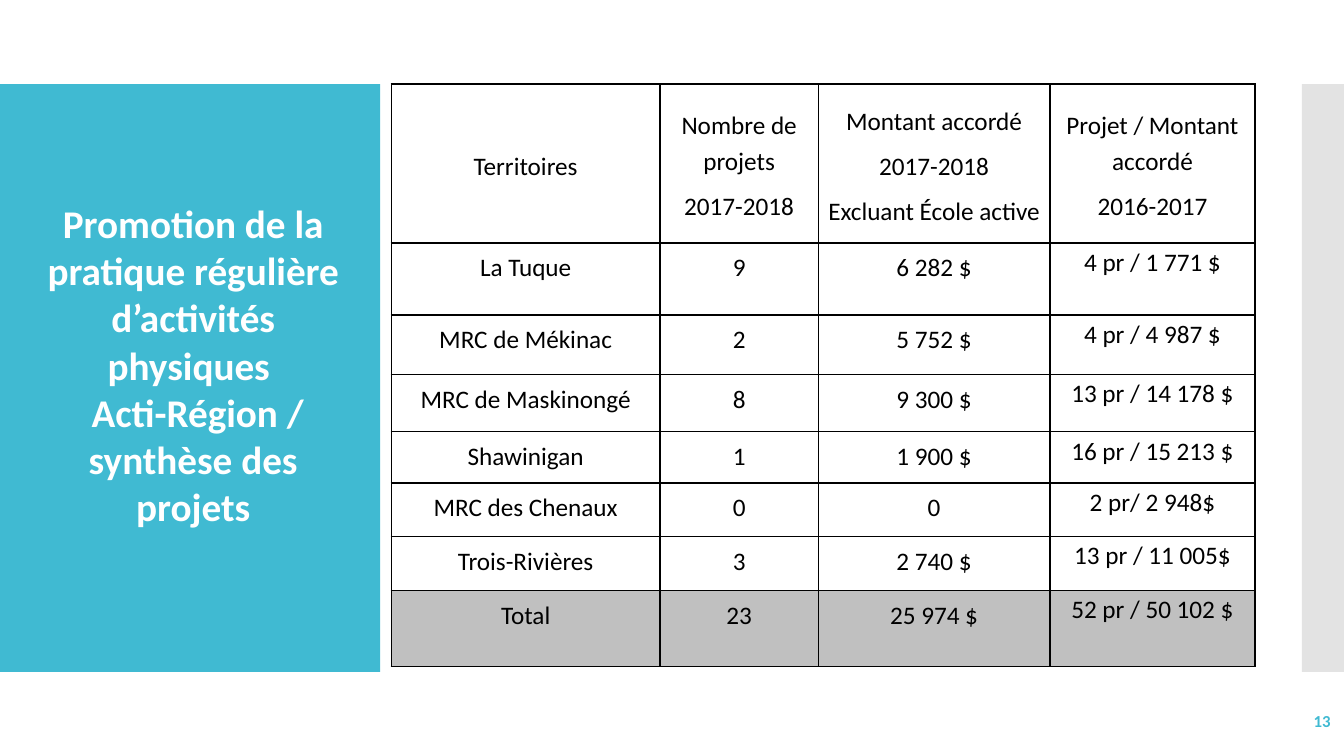
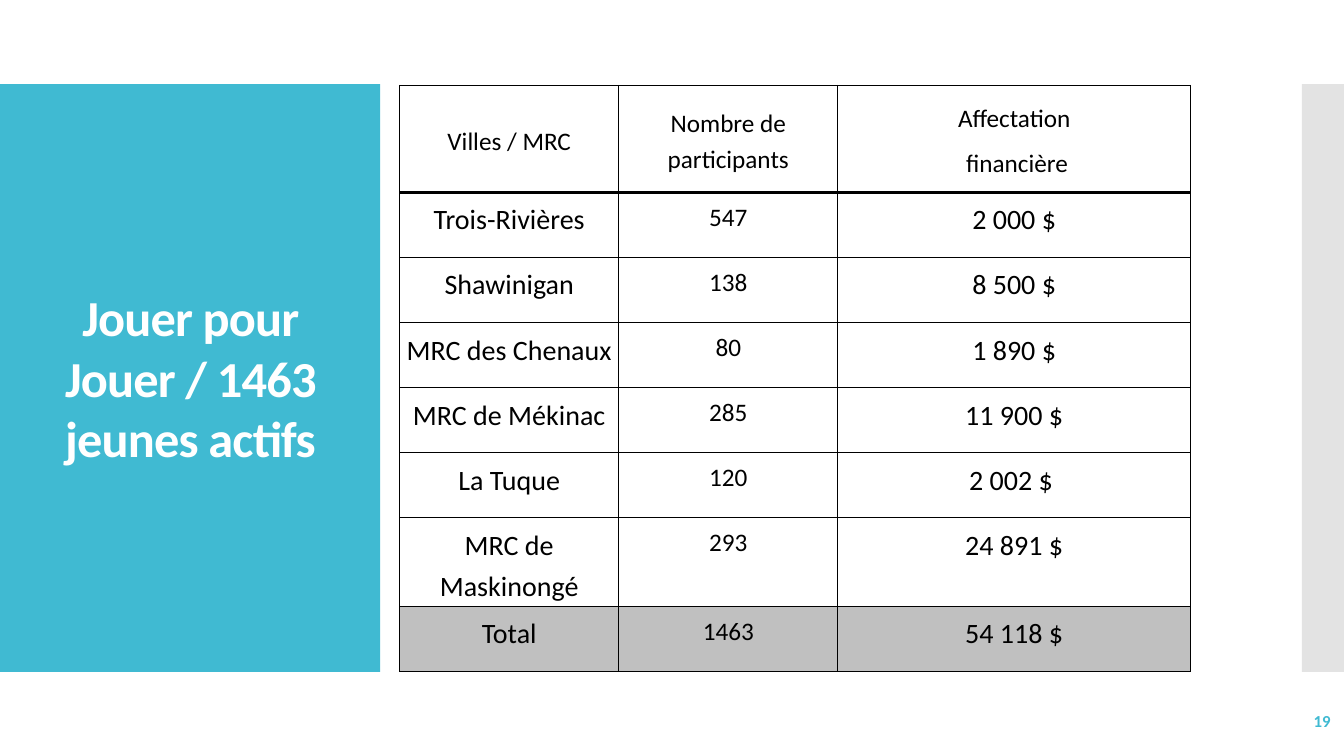
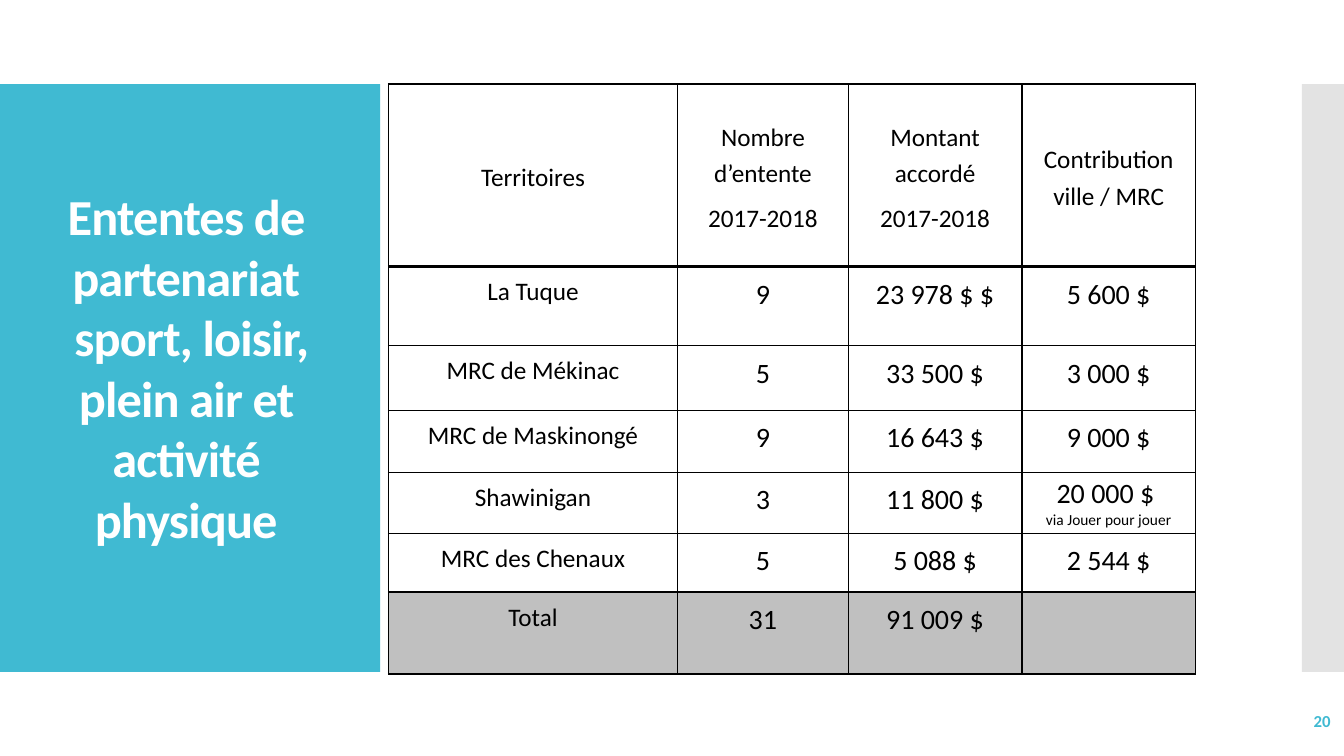
from lxml import etree
from pptx import Presentation
from pptx.dml.color import RGBColor
from pptx.enum.shapes import MSO_SHAPE
from pptx.enum.text import MSO_ANCHOR, MSO_AUTO_SIZE, PP_ALIGN
from pptx.oxml.ns import qn
from pptx.util import Pt

RECTANGLE = MSO_SHAPE.RECTANGLE
TOP, MIDDLE = MSO_ANCHOR.TOP, MSO_ANCHOR.MIDDLE
CENTER, RIGHT = PP_ALIGN.CENTER, PP_ALIGN.RIGHT
NO_AUTOFIT = MSO_AUTO_SIZE.NONE

COLORS = {
    "accent": "40BAD2",
    "side": "C8C8C8",
    "white": "FFFFFF",
    "black": "000000",
    "total": "C0C0C0",
}
FONT = "Calibri"
TITLE_ONLY = 5
THIN, THICK = 1, 2.25
CELL_MARGIN = 3
BAND_TOP, BAND_HEIGHT = 60, 420

PROJECT_ROWS = [
    ("Territoires", "Nombre de projets\n2017-2018",
     "Montant accordé\n2017-2018\nExcluant École active", "Projet / Montant accordé\n2016-2017"),
    ("La Tuque", "9", "6 282 $", "4 pr / 1 771 $"),
    ("MRC de Mékinac", "2", "5 752 $", "4 pr / 4 987 $"),
    ("MRC de Maskinongé", "8", "9 300 $", "13 pr / 14 178 $"),
    ("Shawinigan", "1", "1 900 $", "16 pr / 15 213 $"),
    ("MRC des Chenaux", "0", "0", "2 pr/ 2 948$"),
    ("Trois-Rivières", "3", "2 740 $", "13 pr / 11 005$"),
    ("Total", "23", "25 974 $", "52 pr / 50 102 $"),
]
PLAY_ROWS = [
    ("Villes / MRC", "Nombre de participants", "Affectation\n financière"),
    ("Trois-Rivières", "547", "2 000 $"),
    ("Shawinigan", "138", "8 500 $"),
    ("MRC des Chenaux", "80", "1 890 $"),
    ("MRC de Mékinac", "285", "11 900 $"),
    ("La Tuque", "120", "2 002 $ "),
    ("MRC de Maskinongé", "293", "24 891 $"),
    ("Total", "1463", "54 118 $"),
]
AGREEMENT_ROWS = [
    ("Territoires", "Nombre d’entente\n2017-2018", "Montant accordé\n2017-2018",
     "Contribution ville / MRC"),
    ("La Tuque", "9", "23 978 $ $", "5 600 $"),
    ("MRC de Mékinac", "5", "33 500 $", "3 000 $"),
    ("MRC de Maskinongé", "9", "16 643 $", "9 000 $"),
    ("Shawinigan", "3", "11 800 $", "20 000 $ \nvia Jouer pour jouer"),
    ("MRC des Chenaux", "5", "5 088 $", "2 544 $"),
    ("Total", "31", "91 009 $", ""),
]


def rgb(name):
    """Return the named colour."""
    return RGBColor.from_string(COLORS[name])


def style_paragraph(paragraph, size, color, bold=False, align=CENTER):
    """Set the font and alignment of a paragraph."""
    paragraph.alignment = align
    font = paragraph.font
    font.name, font.size, font.bold = FONT, Pt(size), bold
    font.color.rgb = rgb(color)


def add_band(slide, left, width, color, opacity=100):
    """Draw a full-height band behind the title."""
    band = slide.shapes.add_shape(RECTANGLE, Pt(left), Pt(BAND_TOP), Pt(width), Pt(BAND_HEIGHT))
    band.shadow.inherit = False
    band.line.fill.background()
    band.fill.solid()
    band.fill.fore_color.rgb = rgb(color)
    if opacity < 100:
        fill_color = next(band.element.spPr.iter(qn("a:srgbClr")))
        etree.SubElement(fill_color, qn("a:alpha"), val=str(opacity * 1000))
    slide.shapes.title.element.addprevious(band.element)


def set_title(slide, paragraphs, box, size, anchor=MIDDLE, gap=0, tracking=0):
    """Place and format the title placeholder."""
    title = slide.shapes.title
    title.left, title.top, title.width, title.height = map(Pt, box)
    frame = title.text_frame
    frame.auto_size = NO_AUTOFIT
    frame.word_wrap = True
    frame.vertical_anchor = anchor
    for index, text in enumerate(paragraphs):
        paragraph = frame.add_paragraph() if index else frame.paragraphs[0]
        paragraph.text = text
        paragraph.space_before = paragraph.space_after = Pt(gap)
        style_paragraph(paragraph, size, "white", bold=True)
    for properties in title.element.iter(qn("a:defRPr")):
        properties.set("spc", str(round(tracking * 100)))


def add_page_number(slide, number):
    """Write the page number at the lower right."""
    box = slide.shapes.add_textbox(Pt(837.5), Pt(500.5), Pt(120), Pt(29))
    frame = box.text_frame
    frame.word_wrap = True
    frame.vertical_anchor = MIDDLE
    frame.text = str(number)
    style_paragraph(frame.paragraphs[0], 12, "accent", bold=True, align=RIGHT)


def add_base_slide(presentation, number):
    """Add a slide with the shared bands and page number."""
    slide = presentation.slides.add_slide(presentation.slide_layouts[TITLE_ONLY])
    add_band(slide, 0, 271.5, "accent")
    add_band(slide, 930, 30, "side", opacity=50)
    add_page_number(slide, number)
    return slide


def set_borders(cell, top, bottom):
    """Draw the four black borders of a cell."""
    properties = cell._tc.get_or_add_tcPr()
    for tag, width in (("a:lnL", THIN), ("a:lnR", THIN), ("a:lnT", top), ("a:lnB", bottom)):
        line = etree.SubElement(properties, qn(tag), w=str(Pt(width)))
        fill = etree.SubElement(line, qn("a:solidFill"))
        etree.SubElement(fill, qn("a:srgbClr"), val=COLORS["black"])


def write_cell(cell, text, size, spaced):
    """Write centred text in a cell."""
    cell.text = text
    for paragraph in cell.text_frame.paragraphs:
        style_paragraph(paragraph, size, "black")
        if spaced:
            paragraph.line_spacing = 1.19
            paragraph.space_after = Pt(6)


def add_grid(slide, position, rows, widths, heights, sizes, compact=()):
    """Add a bordered table with a header row and a grey total row."""
    left, top = position
    frame = slide.shapes.add_table(len(rows), len(widths), Pt(left), Pt(top),
                                   Pt(sum(widths)), Pt(sum(heights)))
    table = frame.table
    table.first_row = table.horz_banding = False
    for column, width in zip(table.columns, widths):
        column.width = Pt(width)
    for row, height in zip(table.rows, heights):
        row.height = Pt(height)
    last = len(rows) - 1
    for r, texts in enumerate(rows):
        for c, text in enumerate(texts):
            cell = table.cell(r, c)
            cell.margin_left = cell.margin_right = Pt(CELL_MARGIN)
            cell.margin_top = cell.margin_bottom = Pt(CELL_MARGIN)
            cell.vertical_anchor = TOP if r else MIDDLE
            set_borders(cell, THICK if r == 1 else THIN, THIN if r else THICK)
            cell.fill.solid()
            cell.fill.fore_color.rgb = rgb("total" if r == last else "white")
            spaced = r == 0 or not {(r, c), c} & set(compact)
            write_cell(cell, text, sizes[c] if r else 18, spaced)
    return table


def build_projects(presentation):
    """Build the summary of projects by territory."""
    slide = add_base_slide(presentation, 13)
    set_title(slide, ["Promotion de la pratique régulière d’activités physiques ",
                      " Acti-Région / synthèse des projets"],
              (22.5, 139, 231, 245), 28, anchor=TOP)
    add_grid(slide, (279.5, 60), PROJECT_ROWS, (192, 113, 165.5, 146.5),
             (113.5, 51.5, 42.5, 41, 36.5, 38.5, 38.5, 54), (18, 18, 18, 18), compact=(3,))


def build_play(presentation):
    """Build the participants and funding by town."""
    slide = add_base_slide(presentation, 19)
    set_title(slide, ["Jouer pour Jouer / 1463 jeunes actifs"],
              (20, 88.5, 232, 362), 36, gap=6, tracking=-0.6)
    add_grid(slide, (285.5, 61), PLAY_ROWS, (156.5, 156.5, 252),
             (76.5, *[46.5] * 5, 59, 46.5), (20, 18, 20))


def build_agreements(presentation):
    """Build the partnership agreements by territory."""
    slide = add_base_slide(presentation, 20)
    set_title(slide, ["Ententes de partenariat\n sport, loisir, plein air et activité physique"],
              (24.5, 220.5, 217, 83), 36, tracking=-0.6)
    table = add_grid(slide, (277.5, 60), AGREEMENT_ROWS, (206.5, 122, 124, 124),
                     (130.5, 56.5, 46, 44.5, 43.5, 42, 58.5), (18, 20, 20, 20),
                     compact=((4, 3),))
    table.cell(4, 3).text_frame.paragraphs[1].font.size = Pt(11)


def main():
    """Build and save the presentation."""
    presentation = Presentation()
    presentation.slide_width, presentation.slide_height = Pt(960), Pt(540)
    build_projects(presentation)
    build_play(presentation)
    build_agreements(presentation)
    presentation.save("out.pptx")


if __name__ == "__main__":
    main()
